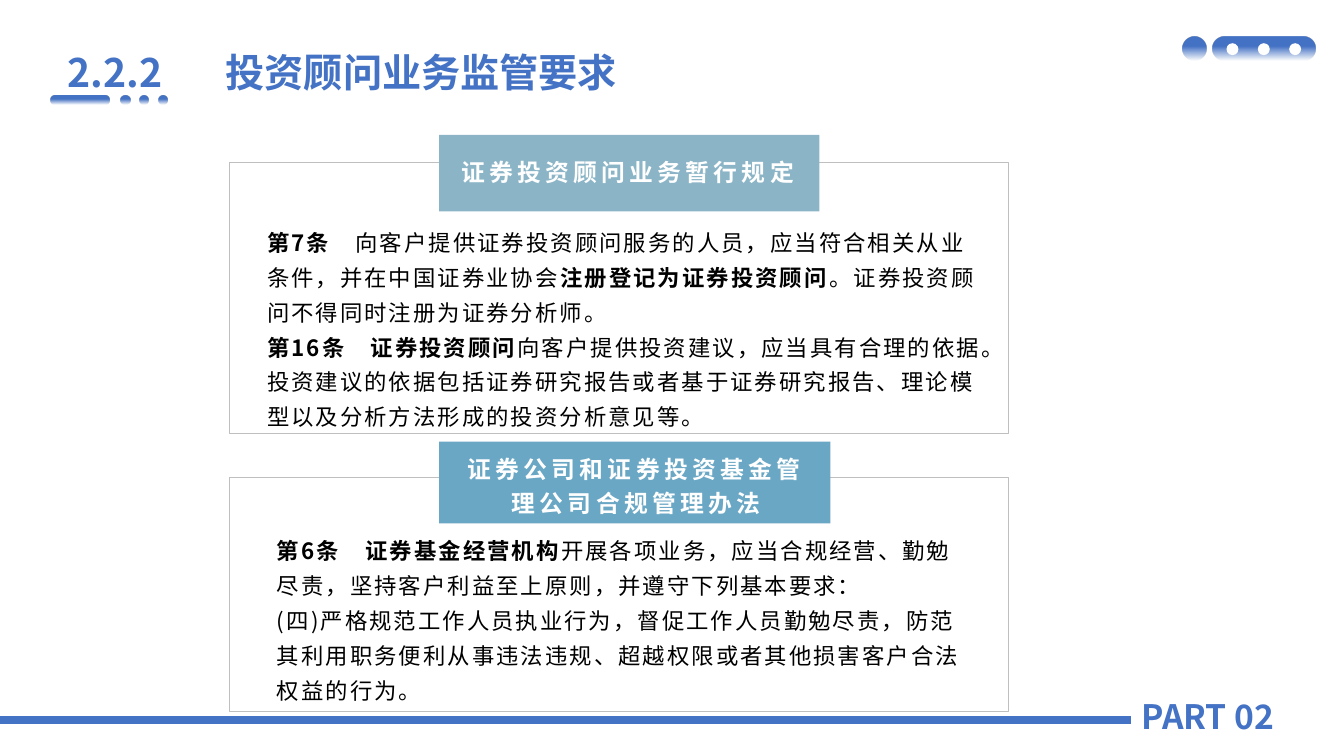
"""Build the slide on regulatory requirements for investment advisory business."""
from pptx import Presentation
from pptx import util as u
from pptx.dml.color import RGBColor
from pptx.enum import shapes, text
from pptx.oxml.ns import qn
from lxml import etree

BLUE = RGBColor(0x44, 0x72, 0xC4)
PALE_TEAL = RGBColor(0x8B, 0xB5, 0xC7)
SKY = RGBColor(0x69, 0xA7, 0xC5)
GREY = RGBColor(0xBF, 0xBF, 0xBF)
BLACK = RGBColor(0, 0, 0)
WHITE = RGBColor(255, 255, 255)
SANS = "Noto Sans CJK SC"
RECTANGLE = shapes.MSO_SHAPE.RECTANGLE
ROUNDED = shapes.MSO_SHAPE.ROUNDED_RECTANGLE
OVAL = shapes.MSO_SHAPE.OVAL

deck = Presentation()
deck.slide_width, deck.slide_height = u.Cm(33.87), u.Cm(19.05)
page = deck.slides.add_slide(deck.slide_layouts[6])


def add_shape(kind, place, fill=None, line=None, fade=False):
    shape = page.shapes.add_shape(kind, *[u.Cm(length) for length in place])
    shape.shadow.inherit = False
    if kind == ROUNDED:
        shape.adjustments[0] = 0.5
    if fade:
        shape.fill.gradient()
        shape.fill.gradient_angle = 270
        for stop, position in zip(shape.fill.gradient_stops, (0.4, 1)):
            stop.position = position
            stop.color.rgb = BLUE
        last_colour = shape._element.spPr.findall(".//" + qn("a:srgbClr"))[-1]
        etree.SubElement(last_colour, qn("a:alpha"), val="0")
    elif fill is None:
        shape.fill.background()
    else:
        shape.fill.solid()
        shape.fill.fore_color.rgb = fill
    if line is None:
        shape.line.fill.background()
    else:
        shape.line.color.rgb = line
        shape.line.width = u.Pt(1)


def add_text(place, paragraphs, size, colour, font=SANS, spacing=0, leading=None,
             centred=False, wrap=True):
    box = page.shapes.add_textbox(*[u.Cm(length) for length in place])
    frame = box.text_frame
    frame.word_wrap = wrap
    if not wrap:
        frame.auto_size = text.MSO_AUTO_SIZE.SHAPE_TO_FIT_TEXT
    if centred:
        frame.vertical_anchor = text.MSO_ANCHOR.MIDDLE
    for index, spans in enumerate(paragraphs):
        para = frame.add_paragraph() if index else frame.paragraphs[0]
        para.line_spacing = leading
        if centred:
            para.alignment = text.PP_ALIGN.CENTER
        para.font.size = u.Pt(size)
        para.font.name = font
        para.font.color.rgb = colour
        defaults = para.font._element
        defaults.set("spc", str(int(spacing * 100)))
        etree.SubElement(defaults, qn("a:ea"), typeface=SANS)
        for words, bold in spans:
            span = para.add_run()
            span.text = words
            span.font.bold = bold


add_shape(ROUNDED, (30.56, 0.92, 2.59, 0.61), fade=True)
for step in range(3):
    add_shape(OVAL, (30.91 + 0.79 * step, 1.09, 0.3, 0.3), fill=WHITE)
add_shape(OVAL, (29.79, 0.92, 0.61, 0.61), fade=True)

add_shape(ROUNDED, (1.27, 2.4, 1.5, 0.23), fade=True)
for step in range(3):
    add_shape(OVAL, (3.05 + 0.47 * step, 2.4, 0.23, 0.23), fade=True)

footer_line = page.shapes.add_connector(
    shapes.MSO_CONNECTOR.STRAIGHT, u.Cm(0), u.Cm(18.14), u.Cm(28.5), u.Cm(18.14))
footer_line.line.color.rgb = BLUE
footer_line.line.width = u.Pt(6)
etree.SubElement(footer_line._element.spPr, qn("a:effectLst"))

add_text((28.52, 17.4, 3.86, 1.27), [[("PART 02", True)]], 24, BLUE, wrap=False)
add_text((5.44, 1.09, 22.45, 1.45), [[("投资顾问业务监管要求", True)]], 28, BLUE)
add_text((1.45, 1.09, 2.9, 1.45), [[("2.2.2", True)]], 28, BLUE, wrap=False)

advisory_rules = [
    [("第7条", True),
     ("　向客户提供证券投资顾问服务的人员，应当符合相关从业条件，并在中国证券业协会", False),
     ("注册登记为证券投资顾问", True),
     ("。证券投资顾问不得同时注册为证券分析师。", False)],
    [("第16条　证券投资顾问", True),
     ("向客户提供投资建议，应当具有合理的依据。投资建议的依据包括证券研究报告或者基于"
      "证券研究报告、理论模型以及分析方法形成的投资分析意见等。", False)],
]
compliance_rules = [
    [("第6条　证券基金经营机构", True),
     ("开展各项业务，应当合规经营、勤勉尽责，坚持客户利益至上原则，并遵守下列基本要求：", False)],
    [("(四)严格规范工作人员执业行为，督促工作人员勤勉尽责，防范其利用职务便利从事违法违规、"
      "超越权限或者其他损害客户合法权益的行为。", False)],
]
sections = [
    ((5.79, 4.09, 19.63, 6.83), (11.07, 3.4, 9.58, 1.93), PALE_TEAL,
     (11.25, 3.48, 9.14, 1.55), "证券投资顾问业务暂行规定",
     (6.48, 5.44, 18.62, 1.75), advisory_rules),
    ((5.79, 12.04, 19.63, 5.89), (11.07, 11.13, 9.86, 2.06), SKY,
     (11.46, 11.38, 9.14, 1.6), "证券公司和证券投资基金管理公司合规管理办法",
     (6.73, 13.21, 17.98, 4.72), compliance_rules),
]
for frame_place, banner_place, banner_fill, title_place, title, rules_place, rules in sections:
    add_shape(RECTANGLE, frame_place, line=GREY)
    add_shape(RECTANGLE, banner_place, fill=banner_fill)
    add_text(title_place, [[(title, True)]], 17, WHITE, font="Arial", spacing=3,
             leading=1.2, centred=True)
    add_text(rules_place, rules, 16, BLACK, spacing=1.5, leading=1.3)

deck.save("out.pptx")
